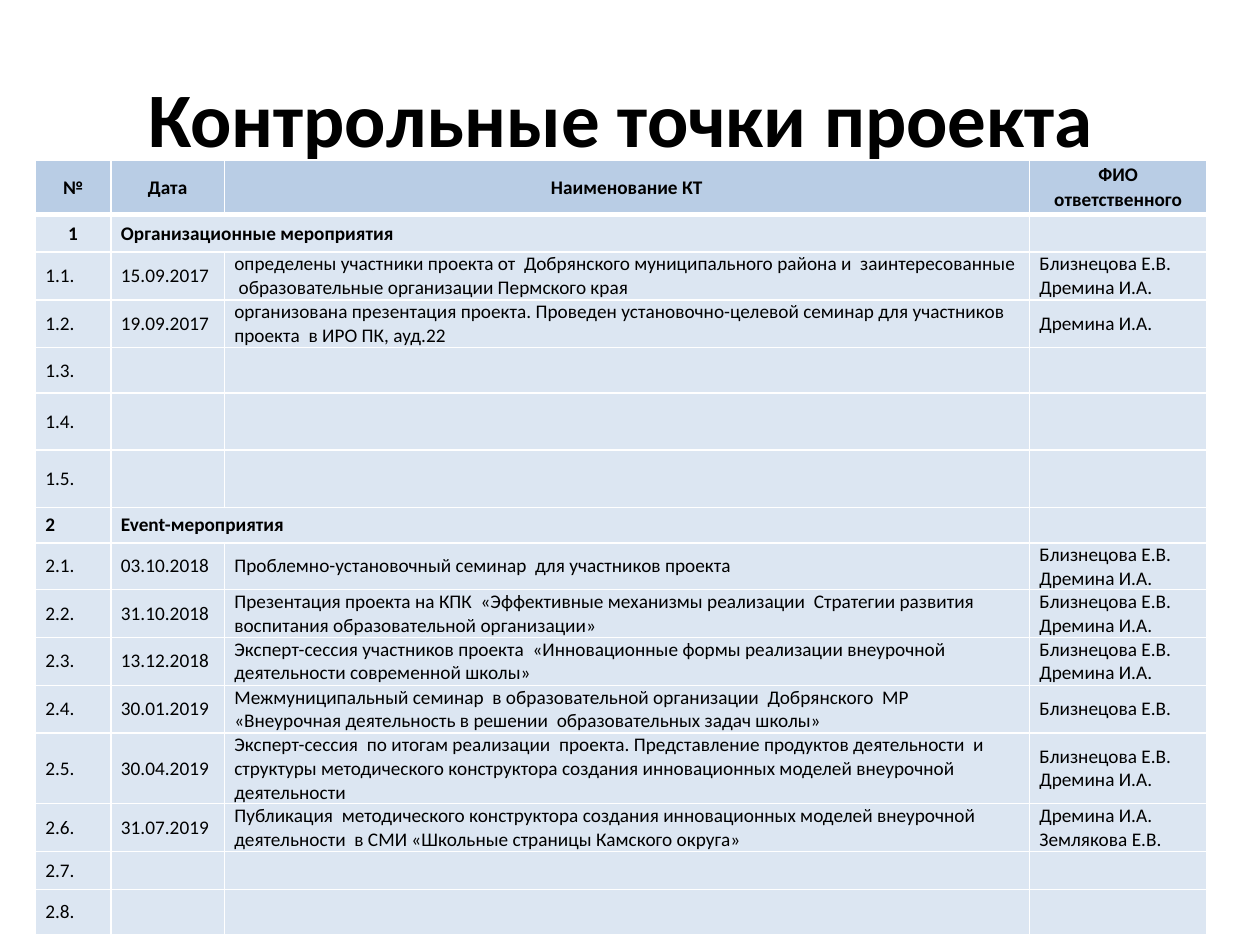
from lxml.etree import SubElement
from pptx import Presentation
from pptx.dml.color import RGBColor
from pptx.enum.text import MSO_ANCHOR, PP_ALIGN
from pptx.oxml.ns import qn
from pptx.util import Inches, Pt

BLACK = RGBColor(0x00, 0x00, 0x00)
WHITE = RGBColor(0xFF, 0xFF, 0xFF)
HEADER_BLUE = RGBColor(0xB9, 0xCD, 0xE5)
BODY_BLUE = RGBColor(0xDC, 0xE6, 0xF2)
FONT = "Calibri"
BODY_SIZE = Pt(11)

TITLE = "Контрольные точки проекта "
BOTH = "Близнецова Е.В.\nДремина И.А."
COLUMN_WIDTHS = (0.6, 0.9, 6.39, 1.41)
CHECKPOINTS = [
    (0.43, "№", "Дата", "Наименование КТ", "ФИО ответственного"),
    (0.3, "1", "Организационные мероприятия", "", ""),
    (0.38, "1.1.", "15.09.2017",
     "определены участники проекта от  Добрянского муниципального района и  "
     "заинтересованные  образовательные организации Пермского края", BOTH),
    (0.38, "1.2.", "19.09.2017",
     "организована презентация проекта. Проведен установочно-целевой семинар "
     "для участников проекта  в ИРО ПК, ауд.22", "Дремина И.А."),
    (0.36, "1.3.", "", "", ""),
    (0.45, "1.4.", "", "", ""),
    (0.46, "1.5.", "", "", ""),
    (0.28, "2", "Event-мероприятия", "", ""),
    (0.37, "2.1.", "03.10.2018",
     "Проблемно-установочный семинар  для участников проекта", BOTH),
    (0.38, "2.2.", "31.10.2018",
     "Презентация проекта на КПК  «Эффективные механизмы реализации  "
     "Стратегии развития воспитания образовательной организации»", BOTH),
    (0.38, "2.3.", "13.12.2018",
     "Эксперт-сессия участников проекта  «Инновационные формы реализации "
     "внеурочной деятельности современной школы»", BOTH),
    (0.38, "2.4.", "30.01.2019",
     "Межмуниципальный семинар  в образовательной организации  Добрянского  МР "
     "«Внеурочная деятельность в решении  образовательных задач школы»",
     "Близнецова Е.В."),
    (0.56, "2.5.", "30.04.2019",
     "Эксперт-сессия  по итогам реализации  проекта. Представление продуктов "
     "деятельности  и структуры методического конструктора создания "
     "инновационных моделей внеурочной деятельности", BOTH),
    (0.38, "2.6.", "31.07.2019",
     "Публикация  методического конструктора создания инновационных моделей "
     "внеурочной деятельности  в СМИ «Школьные страницы Камского округа»",
     "Дремина И.А.\nЗемлякова Е.В."),
    (0.3, "2.7.", "", "", ""),
    (0.36, "2.8.", "", "", ""),
]
HEADER_ROW, FIRST_SECTION_ROW = 0, 1
SECTION_NUMBERS = ("1", "2")


def format_runs(paragraph, size, bold):
    for run in paragraph.runs:
        run.font.name = FONT
        run.font.size = size
        run.font.bold = bold
        run.font.color.rgb = BLACK


def add_border(cell, side, points):
    line = SubElement(cell._tc.get_or_add_tcPr(), qn(f"a:ln{side}"), w=str(Pt(points)))
    fill = SubElement(line, qn("a:solidFill"))
    SubElement(fill, qn("a:srgbClr"), val=str(WHITE))


def style_cell(cell, row, bold, centered):
    cell.vertical_anchor = MSO_ANCHOR.MIDDLE
    cell.margin_left = cell.margin_right = Inches(0.08)
    cell.margin_top = cell.margin_bottom = 0
    for side in "LRTB":
        under_header = (row, side) in ((HEADER_ROW, "B"), (FIRST_SECTION_ROW, "T"))
        add_border(cell, side, 3 if under_header else 1)
    cell.fill.solid()
    cell.fill.fore_color.rgb = HEADER_BLUE if row == HEADER_ROW else BODY_BLUE
    for paragraph in cell.text_frame.paragraphs:
        paragraph.alignment = PP_ALIGN.CENTER if centered else PP_ALIGN.LEFT
        if row <= FIRST_SECTION_ROW:
            paragraph.line_spacing = Pt(14)
        format_runs(paragraph, BODY_SIZE, bold)
        if not paragraph.runs:
            SubElement(paragraph._p, qn("a:endParaRPr"), sz=str(int(BODY_SIZE.pt * 100)))


def add_title(slide):
    title = slide.shapes.add_textbox(Inches(0.5), Inches(0.3), Inches(9), Inches(1.25))
    title.text_frame.word_wrap = True
    title.text_frame.vertical_anchor = MSO_ANCHOR.MIDDLE
    title.text_frame.text = TITLE
    heading = title.text_frame.paragraphs[0]
    heading.alignment = PP_ALIGN.CENTER
    format_runs(heading, Pt(44), True)


def add_checkpoints(slide):
    total_height = sum(height for height, *_ in CHECKPOINTS)
    table = slide.shapes.add_table(
        len(CHECKPOINTS), len(COLUMN_WIDTHS), Inches(0.28), Inches(1.27),
        Inches(sum(COLUMN_WIDTHS)), Inches(total_height)).table
    for column, width in zip(table.columns, COLUMN_WIDTHS):
        column.width = Inches(width)
    for row, (height, *texts) in enumerate(CHECKPOINTS):
        table.rows[row].height = Inches(height)
        is_section = texts[0] in SECTION_NUMBERS
        for column, text in enumerate(texts):
            cell = table.cell(row, column)
            cell.text_frame.text = text
            centered = row == HEADER_ROW or (row, column) == (FIRST_SECTION_ROW, 0)
            style_cell(cell, row, row == HEADER_ROW or is_section, centered)
        if is_section:
            table.cell(row, 1).merge(table.cell(row, 2))


def main():
    presentation = Presentation()
    presentation.slide_width = Inches(10)
    presentation.slide_height = Inches(7.5)
    slide = presentation.slides.add_slide(presentation.slide_layouts[6])
    add_title(slide)
    add_checkpoints(slide)
    presentation.save("out.pptx")


if __name__ == "__main__":
    main()
